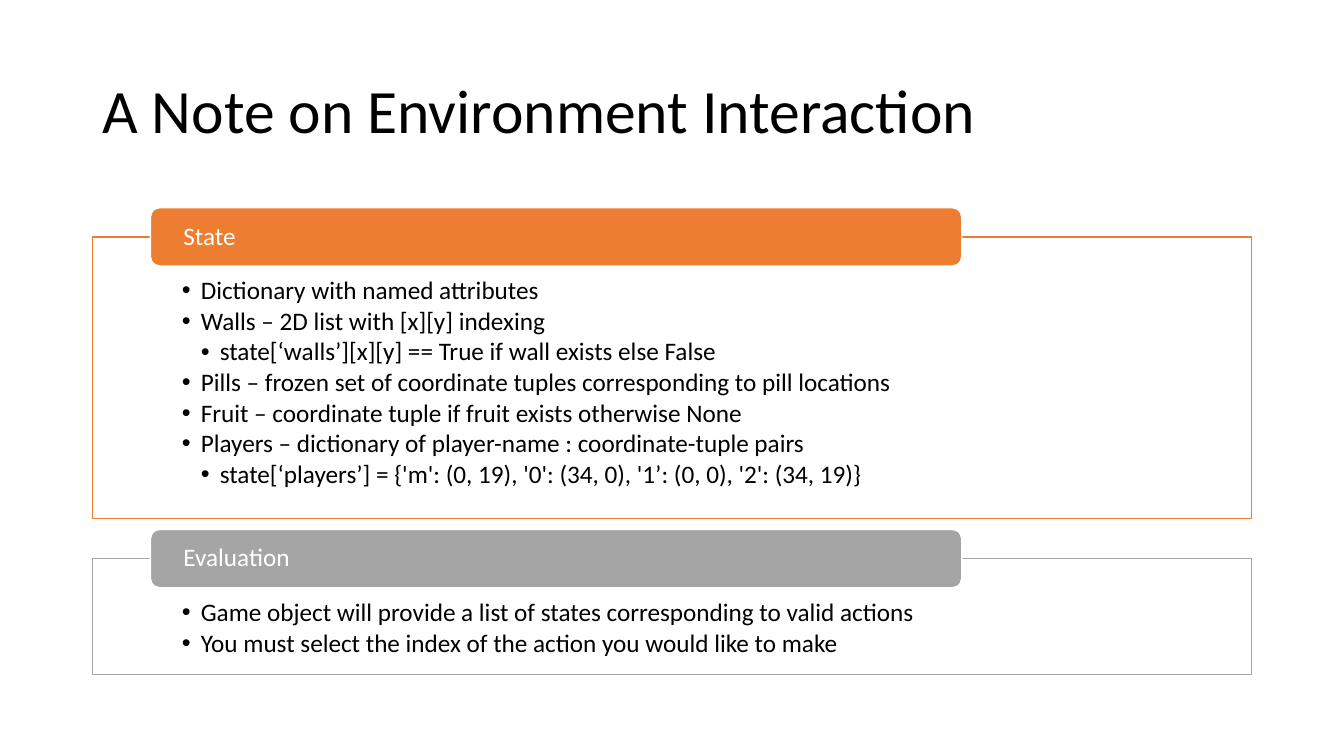
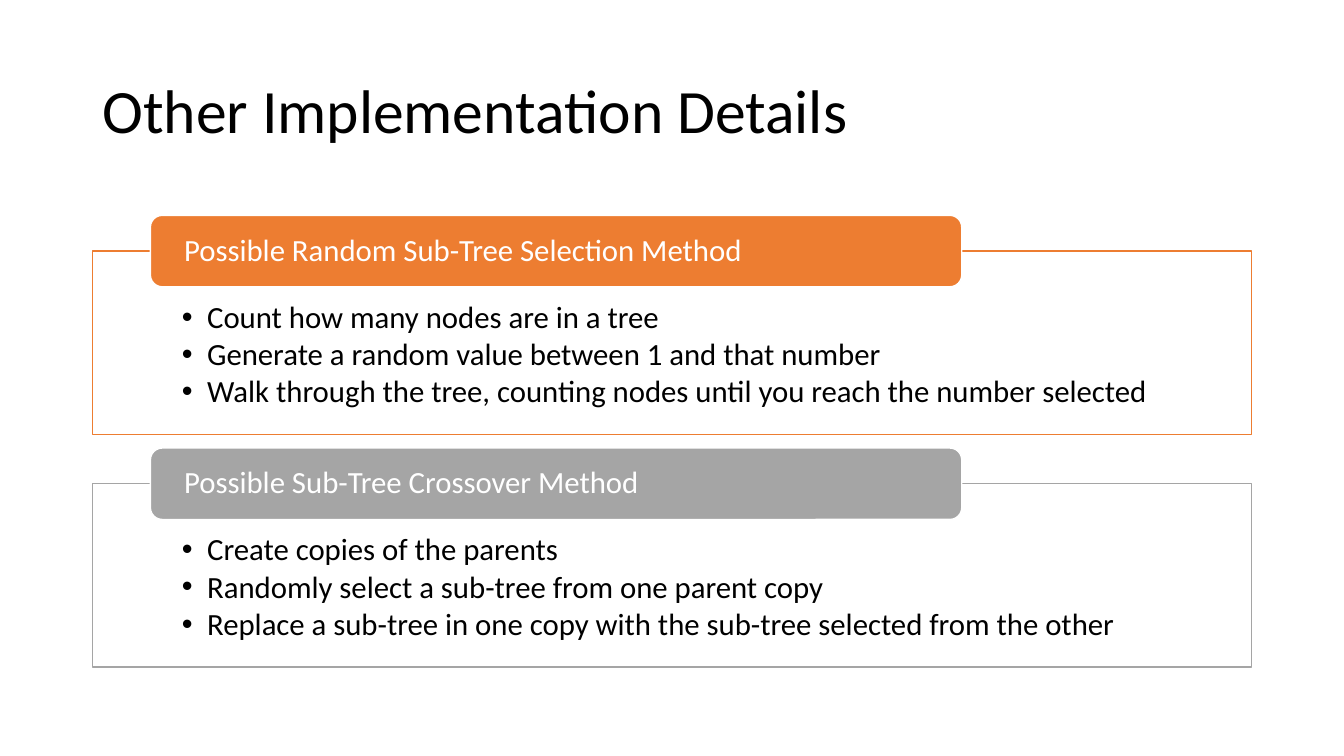
from lxml import etree
from pptx import Presentation
from pptx.dml.color import RGBColor
from pptx.enum.shapes import MSO_SHAPE
from pptx.enum.text import MSO_ANCHOR, PP_ALIGN
from pptx.oxml.ns import qn
from pptx.util import Pt

RECT, ROUNDED = MSO_SHAPE.RECTANGLE, MSO_SHAPE.ROUNDED_RECTANGLE
TOP, MIDDLE = MSO_ANCHOR.TOP, MSO_ANCHOR.MIDDLE
LEFT = PP_ALIGN.LEFT

FONT = "Calibri"
BLACK, WHITE = "000000", "FFFFFF"
ORANGE, GRAY = "ED7D31", "A5A5A5"
ACCENTS = [ORANGE, GRAY]
TITLE_ONLY = 5
MARGIN, CONTENT_WIDTH = 66, 828
TITLE_BOX = (MARGIN, 28.8, CONTENT_WIDTH, 104.4)

SLIDES = [
    {
        "title": "A Note on Environment Interaction",
        "top": 148.3, "size": 18, "indent": 13.5,
        "sections": [
            ("State", 201, [
                (0, "Dictionary with named attributes"),
                (0, "Walls – 2D list with [x][y] indexing"),
                (1, "state[‘walls’][x][y] == True if wall exists else False"),
                (0, "Pills – frozen set of coordinate tuples corresponding to pill locations"),
                (0, "Fruit – coordinate tuple if fruit exists otherwise None"),
                (0, "Players – dictionary of player-name : coordinate-tuple pairs"),
                (1, "state[‘players’] = {'m': (0, 19), '0': (34, 0), '1’: (0, 0), '2': (34, 19)}"),
            ]),
            ("Evaluation", 82.8, [
                (0, "Game object will provide a list of states corresponding to valid actions"),
                (0, "You must select the index of the action you would like to make"),
            ]),
        ],
    },
    {
        "title": "Other Implementation Details",
        "top": 153.8, "size": 22, "indent": 18,
        "sections": [
            ("Possible Random Sub-Tree Selection Method", 131, [
                (0, "Count how many nodes are in a tree"),
                (0, "Generate a random value between 1 and that number"),
                (0, "Walk through the tree, counting nodes until you reach the number selected"),
            ]),
            ("Possible Sub-Tree Crossover Method", 131, [
                (0, "Create copies of the parents"),
                (0, "Randomly select a sub-tree from one parent copy"),
                (0, "Replace a sub-tree in one copy with the sub-tree selected from the other"),
            ]),
        ],
    },
]


def color(hex_code):
    return RGBColor.from_string(hex_code)


def write(paragraph, text, size, hex_code):
    paragraph.alignment = LEFT
    paragraph.line_spacing = 0.9
    run = paragraph.add_run()
    run.text = text
    run.font.name = FONT
    run.font.size = Pt(size)
    run.font.color.rgb = color(hex_code)


def add_bullet(paragraph, level, indent):
    paragraph.level = level + 1
    properties = paragraph._p.get_or_add_pPr()
    properties.set("marL", str(Pt(indent * (level + 1))))
    properties.set("indent", str(-Pt(indent)))
    etree.SubElement(properties, qn("a:buFont"), typeface="Arial")
    etree.SubElement(properties, qn("a:buChar"), char="•")


def add_panel(slide, preset, box, fill, line, insets, anchor):
    panel = slide.shapes.add_shape(preset, *map(Pt, box))
    panel.shadow.inherit = False
    panel.fill.solid()
    panel.fill.fore_color.rgb = color(fill)
    panel.line.color.rgb = color(line)
    panel.line.width = Pt(1)
    frame = panel.text_frame
    frame.word_wrap = True
    frame.vertical_anchor = anchor
    frame.margin_left, frame.margin_top, frame.margin_right, frame.margin_bottom = map(Pt, insets)
    return panel


def add_title(slide, text, box):
    title = slide.shapes.title
    title.left, title.top, title.width, title.height = map(Pt, box)
    title.text_frame.vertical_anchor = MIDDLE
    write(title.text_frame.paragraphs[0], text, 44, BLACK)


def add_section(slide, box, heading, bullets, accent, size, indent):
    left, top, width, height = box
    tab_height = 2.32 * size
    body_box = (left, top + tab_height / 2, width, height - tab_height / 2)
    body_insets = (64, 1.64 * size, 64, 0.56 * size)
    body = add_panel(slide, RECT, body_box, WHITE, accent, body_insets, TOP)
    white_fill = body.fill._xPr.find(qn("a:solidFill"))[0]
    etree.SubElement(white_fill, qn("a:alpha"), val="90000")
    frame = body.text_frame
    for index, (level, text) in enumerate(bullets):
        paragraph = frame.add_paragraph() if index else frame.paragraphs[0]
        write(paragraph, text, size, BLACK)
        paragraph.space_after = Pt(0.13 * size)
        add_bullet(paragraph, level, indent)

    tab_box = (left + 0.05 * width, top, 0.7 * width, tab_height)
    tab = add_panel(slide, ROUNDED, tab_box, accent, WHITE, (21.6, 0, 21.6, 0), MIDDLE)
    write(tab.text_frame.paragraphs[0], heading, size, WHITE)


def add_section_slide(deck, title, top, size, indent, sections):
    slide = deck.slides.add_slide(deck.slide_layouts[TITLE_ONLY])
    add_title(slide, title, TITLE_BOX)
    for (heading, body_height, bullets), accent in zip(sections, ACCENTS):
        height = body_height + 1.16 * size
        box = (MARGIN, top, CONTENT_WIDTH, height)
        add_section(slide, box, heading, bullets, accent, size, indent)
        top += height + 0.44 * size


def main():
    deck = Presentation()
    deck.slide_width, deck.slide_height = Pt(960), Pt(540)
    for content in SLIDES:
        add_section_slide(deck, **content)
    deck.save("out.pptx")


if __name__ == "__main__":
    main()
